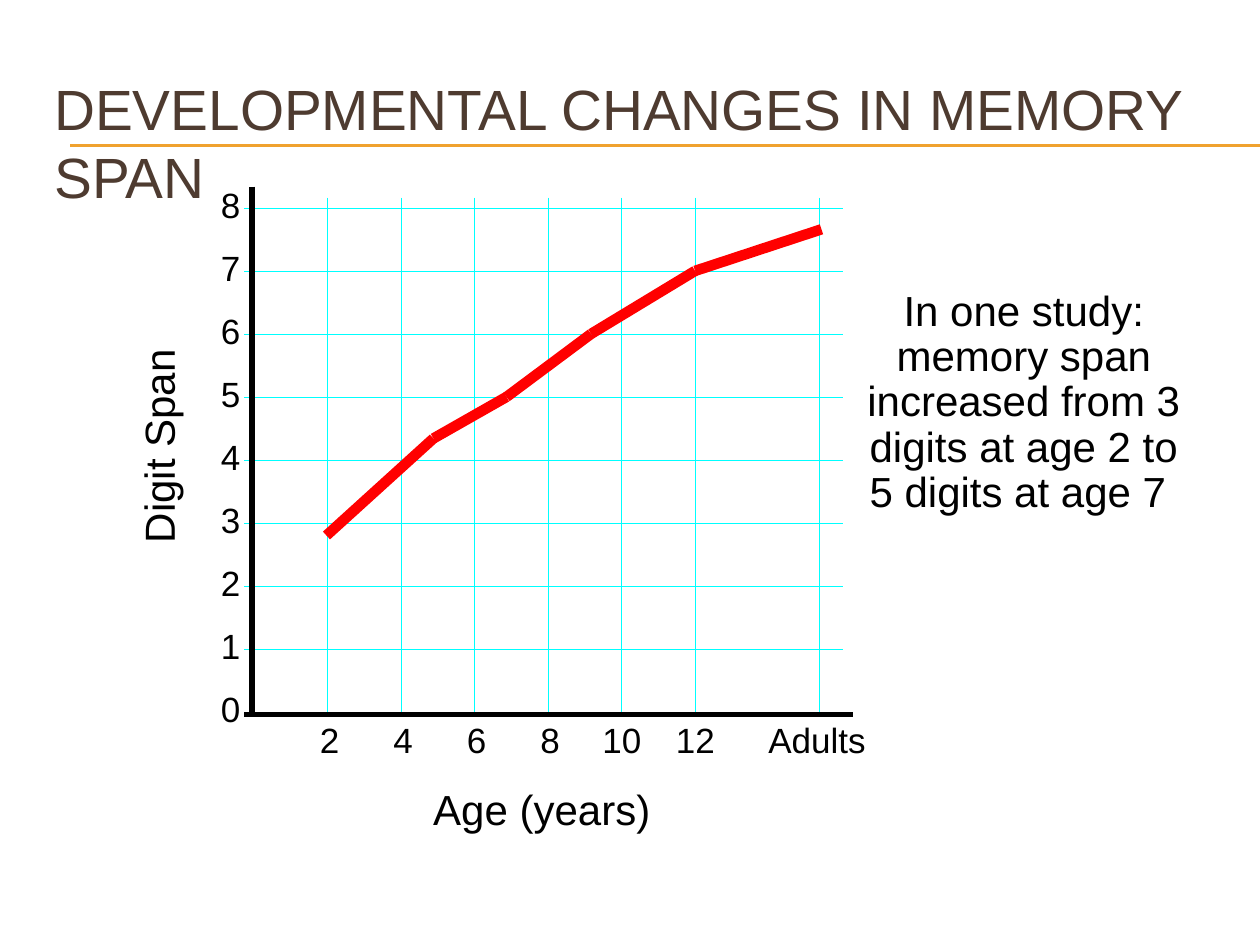
from itertools import pairwise

from lxml.etree import SubElement as Sub
from pptx import Presentation
from pptx.dml.color import RGBColor
from pptx.enum.shapes import MSO_CONNECTOR as Link
from pptx.enum.text import MSO_ANCHOR as Anchor, MSO_AUTO_SIZE as Fit, PP_ALIGN as Align
from pptx.oxml.ns import qn
from pptx.util import Pt


def tint(code):
    """Turn a hex string into a colour."""
    return RGBColor.from_string(code)


def write(frame, text, size=20, color="000000", align=Align.LEFT, pitch=1.0,
          anchor=Anchor.TOP, font="Arial"):
    """Put formatted text into a frame."""
    frame.word_wrap = True
    frame.auto_size = Fit.NONE
    frame.vertical_anchor = anchor
    para = frame.paragraphs[0]
    para.alignment = align
    para.line_spacing = pitch
    run = para.add_run()
    run.text = text
    run.font.name = font
    run.font.size = Pt(size)
    run.font.color.rgb = tint(color)


class Page:
    """Hold the style and the current slide."""

    gold, brown, cyan, red, black = "F0A22E", "4E3B30", "00FFFF", "FF0000", "000000"

    def __init__(self, deck):
        """Add a title-only slide."""
        self.slide = deck.slides.add_slide(deck.slide_layouts[5])

    def title(self, text, box):
        """Place and fill the title."""
        shape = self.slide.shapes.title
        shape.left, shape.top, shape.width, shape.height = map(Pt, box)
        write(shape.text_frame, text, size=32.4, color=self.brown, anchor=Anchor.MIDDLE)

    def text(self, text, box, turn=0, **style):
        """Add a text box."""
        shape = self.slide.shapes.add_textbox(*map(Pt, box))
        shape.rotation = turn
        write(shape.text_frame, text, **style)

    def line(self, start, end, color, width):
        """Add a straight line without shadow."""
        link = self.slide.shapes.add_connector(Link.STRAIGHT, *map(Pt, (*start, *end)))
        link.line.color.rgb = tint(color)
        link.line.width = Pt(width)
        Sub(link._element.spPr, qn("a:effectLst"))

    def trace(self, points, color, width):
        """Join points by straight lines."""
        for start, end in pairwise(points):
            self.line(start, end, color, width)


def across(age):
    """Give the x place of an age."""
    return 187.2 + 21 * (age - 2)


def level(span):
    """Give the y place of a digit span."""
    return 406.8 - 36 * span


def graph(page):
    """Draw the grid, axes, labels and curve."""
    adult = 15.37
    ticks = [(age, str(age)) for age in range(2, 13, 2)] + [(adult, "Adults")]
    sizes = {1: (11.5, 30), 2: (18, 42), 6: (36, 88)}
    for age, name in ticks:
        x = across(age)
        shift, width = sizes[len(name)]
        page.line((x, 113), (x, level(0)), page.cyan, 0.25)
        page.text(name, (x - shift, level(0), width, 31))
    for span in range(9):
        y = level(span)
        if span:
            page.line((139.7, y), (481.7, y), page.cyan, 0.25)
        page.text(str(span), (114.5, y - 17.5, 30, 31), align=Align.RIGHT)
    page.line((139.7, 408.2), (487.4, 408.2), page.black, 3)
    page.line((144, 106.6), (144, level(0)), page.black, 3)
    data = [(1.97, 2.8), (4.88, 4.34), (6.87, 5), (9.17, 6), (12, 7), (15.44, 7.66)]
    page.trace([(across(age), level(span)) for age, span in data], page.red, 6)
    page.text("Age (years)", (240.5, 444.2, 150, 36), size=24)
    page.text("Digit Span", (18, 227.5, 150, 30), turn=270, size=24, pitch=0.8)


def main():
    """Build and save the slide."""
    deck = Presentation()
    deck.slide_width, deck.slide_height = Pt(720), Pt(540)
    page = Page(deck)
    for y in (82.8, 83.5):
        page.line((40.3, y), (720, y), page.gold, 0.75)
    page.title("DEVELOPMENTAL CHANGES IN MEMORY SPAN", (23.8, 48, 684, 66))
    page.text("In one study: memory span increased from 3 digits at age 2 to 5 digits at age 7 ",
              (486, 162, 198, 137), size=24, align=Align.CENTER, pitch=0.9)
    graph(page)
    deck.save("out.pptx")


if __name__ == "__main__":
    main()
